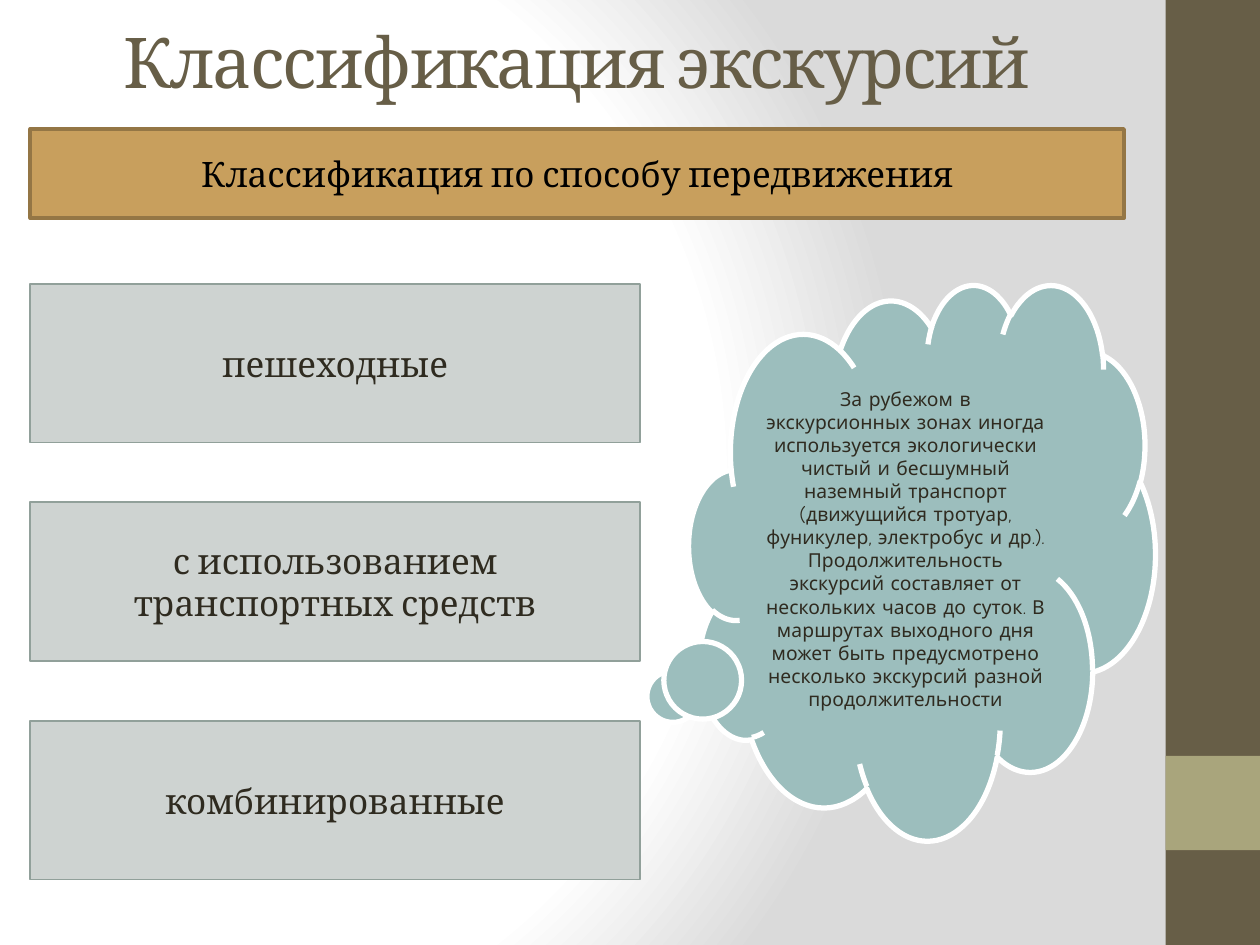
from dataclasses import dataclass

import lxml.etree
import pptx
import pptx.dml.color
import pptx.enum.shapes
import pptx.enum.text
import pptx.oxml
import pptx.oxml.ns
import pptx.util

Cm = pptx.util.Cm
Pt = pptx.util.Pt
Shape = pptx.enum.shapes.MSO_SHAPE
Anchor = pptx.enum.text.MSO_ANCHOR


@dataclass(frozen=True)
class Theme:
    """Colours, fonts and type sizes of the deck."""
    brown: str = "675E47"
    olive: str = "A9A57C"
    gold: str = "C89F5D"
    gold_line: str = "947645"
    grey: str = "CED3D1"
    grey_line: str = "91A09A"
    teal: str = "9CBEBD"
    white: str = "FFFFFF"
    shade: str = "DADADA"
    black: str = "000000"
    ink: str = "2F2B20"
    serif: str = "Cambria"
    casual: str = "Comic Neue"
    title_size: int = 40
    label_size: int = 20
    note_size: int = 11


THEME = Theme()
KINDS = ["пешеходные", "с использованием транспортных средств", "комбинированные"]
NOTE = (
    "За рубежом в экскурсионных зонах иногда используется экологически чистый "
    "и бесшумный наземный транспорт (движущийся тротуар, фуникулер, электробус и др.). "
    "Продолжительность экскурсий составляет от нескольких часов до суток. "
    "В маршрутах выходного дня может быть предусмотрено несколько экскурсий "
    "разной продолжительности"
)


def rgb(value):
    """Turn a hex string into a colour."""
    return pptx.dml.color.RGBColor.from_string(value)


def write_text(shape, text, *, size, color=THEME.ink, font=THEME.serif,
               anchor=Anchor.MIDDLE, spacing=None):
    """Write one centred, formatted paragraph into a shape."""
    frame = shape.text_frame
    frame.word_wrap = True
    frame.auto_size = pptx.enum.text.MSO_AUTO_SIZE.NONE
    frame.vertical_anchor = anchor
    para = frame.paragraphs[0]
    para.alignment = pptx.enum.text.PP_ALIGN.CENTER
    span = para.add_run()
    span.text = text
    span.font.size = Pt(size)
    span.font.name = font
    span.font.color.rgb = rgb(color)
    if spacing is not None:
        span.font._element.set("spc", str(spacing * 100))


def add_box(page, box, fill, line=None, width=1, kind=Shape.RECTANGLE):
    """Add a filled shape at box, given as left, top, width, height in cm."""
    shape = page.shapes.add_shape(kind, *map(Cm, box))
    shape.shadow.inherit = False
    shape.fill.solid()
    shape.fill.fore_color.rgb = rgb(fill)
    if line:
        shape.line.color.rgb = rgb(line)
        shape.line.width = Pt(width)
    else:
        shape.line.fill.background()
    return shape


def paint_background(page):
    """Give the page a circular gradient from white to grey."""
    page.background.fill.solid()
    solid = page.element.xpath(".//p:bgPr/a:solidFill")[0]
    stops = [(0, THEME.white), (75, THEME.white), (100, THEME.shade)]
    gradient = pptx.oxml.parse_xml(
        f'<a:gradFill {pptx.oxml.ns.nsdecls("a")} rotWithShape="1"><a:gsLst>'
        + "".join(f'<a:gs pos="{place * 1000}"><a:srgbClr val="{color}"/></a:gs>'
                  for place, color in stops)
        + '</a:gsLst><a:path path="circle">'
        '<a:fillToRect l="20000" t="50000" r="100000" b="50000"/>'
        "</a:path></a:gradFill>"
    )
    solid.getparent().replace(solid, gradient)


def build_sidebar(page, box):
    """Draw the side band with its square accent."""
    left, top, width, height = box
    add_box(page, box, THEME.brown)
    add_box(page, (left, top + height * 0.8, width, width), THEME.olive)


def build_title(page, box):
    """Place and fill the title placeholder."""
    title = page.shapes.title
    title.left, title.top, title.width, title.height = map(Cm, box)
    title.text_frame.margin_top = Cm(0.04)
    write_text(title, "Классификация экскурсий", size=THEME.title_size,
               color=THEME.brown, anchor=Anchor.TOP, spacing=-1)


def build_banner(page, box):
    """Draw the banner naming the classification."""
    banner = add_box(page, box, THEME.gold, THEME.gold_line, 2)
    write_text(banner, "Классификация по способу передвижения",
               size=THEME.label_size, color=THEME.black)


def build_kinds(page, box, card_height=3.2):
    """Spread one card per kind of excursion evenly down the box."""
    left, top, width, height = box
    pitch = (height - card_height) / (len(KINDS) - 1)
    for row, kind in enumerate(KINDS):
        card = add_box(page, (left, top + row * pitch, width, card_height),
                       THEME.grey, THEME.grey_line)
        write_text(card, kind, size=THEME.label_size)


def build_note(page, box):
    """Draw the thought cloud with its remark."""
    cloud = add_box(page, box, THEME.teal, THEME.white, 3, Shape.CLOUD_CALLOUT)
    cloud.adjustments[0] = -0.55
    cloud.adjustments[1] = 0.25
    write_text(cloud, NOTE, size=THEME.note_size, font=THEME.casual)


def main():
    """Build and save the deck."""
    deck = pptx.Presentation()
    deck.slide_width, deck.slide_height = Cm(25.4), Cm(19.05)
    page = deck.slides.add_slide(deck.slide_layouts[5])
    paint_background(page)
    build_sidebar(page, (23.5, 0, 1.9, 19.05))
    build_title(page, (1.04, 0.33, 21.16, 2.34))
    build_banner(page, (0.61, 2.6, 22.05, 1.8))
    build_kinds(page, (0.61, 5.72, 12.29, 12.01))
    build_note(page, (13.89, 5.72, 9.4, 11.2))
    deck.save("out.pptx")


if __name__ == "__main__":
    main()
